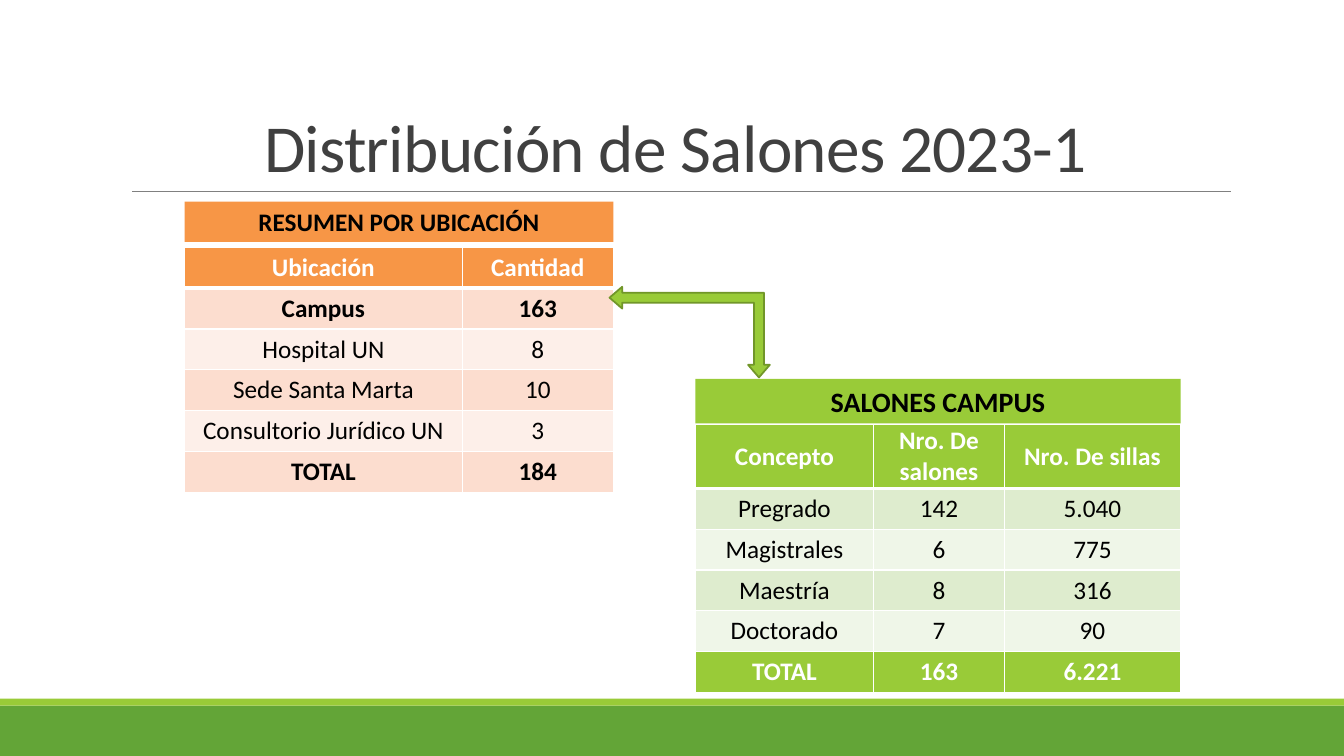
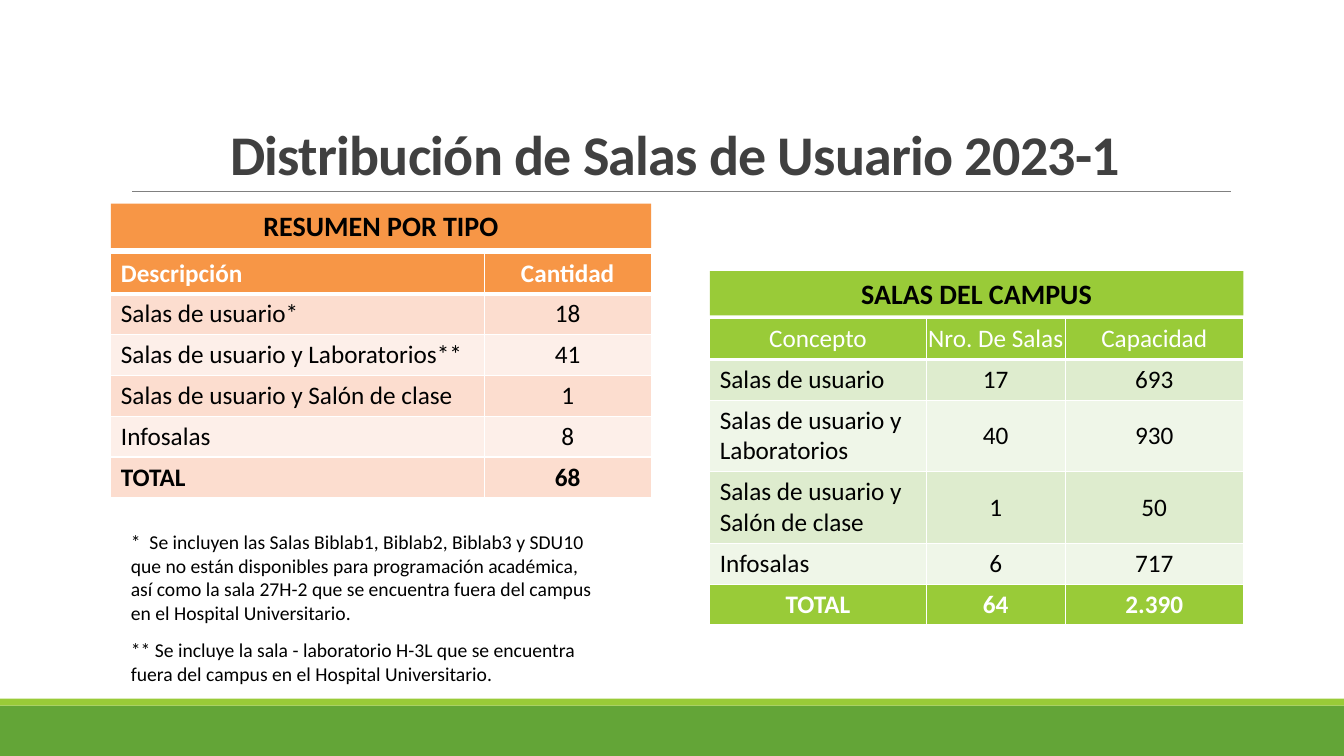
from dataclasses import dataclass

from lxml.etree import SubElement
from pptx import Presentation
from pptx.dml.color import RGBColor
from pptx.enum.shapes import MSO_CONNECTOR, MSO_SHAPE
from pptx.enum.text import MSO_ANCHOR, MSO_AUTO_SIZE, PP_ALIGN
from pptx.oxml.ns import qn
from pptx.util import Inches, Pt

WIDTH, HEIGHT = Inches(13.33), Inches(7.5)
FONT = "Calibri"
BLACK, WHITE, CHARCOAL, GRAY = "000000", "FFFFFF", "404040", "808080"
LIME, GREEN, OLIVE = "99CB38", "63A537", "719629"
ROW, TALL_HEADER, TALL_ROW = 5.4, 8.24, 9.47


@dataclass
class Palette:
    accent: str
    stripes: tuple
    total: str
    total_text: str


ORANGE_PANEL = Palette("F79646", ("FCDDCF", "FDEFE9"), "FCDDCF", BLACK)
GREEN_PANEL = Palette(LIME, ("DEECCE", "EFF6E8"), LIME, WHITE)


def across(percent):
    return round(WIDTH * percent / 100)


def down(percent):
    return round(HEIGHT * percent / 100)


def place(left, top, width, height):
    return across(left), down(top), across(width), down(height)


def rgb(color):
    return RGBColor.from_string(color)


def style(paragraph, size, color, bold=False, align=PP_ALIGN.LEFT):
    paragraph.alignment = align
    font = paragraph.font
    font.name, font.size, font.bold = FONT, Pt(size), bold
    font.color.rgb = rgb(color)


def add_block(slide, box, color, kind=MSO_SHAPE.RECTANGLE):
    block = slide.shapes.add_shape(kind, *place(*box))
    block.shadow.inherit = False
    block.fill.solid()
    block.fill.fore_color.rgb = rgb(color)
    block.line.fill.background()
    return block


def add_rule(slide, left, right, top):
    rule = slide.shapes.add_connector(
        MSO_CONNECTOR.STRAIGHT, across(left), down(top), across(right), down(top))
    rule.line.color.rgb = rgb(GRAY)
    rule.line.width = Pt(0.5)
    SubElement(rule.element.spPr, qn("a:effectLst"))
    return rule


def decorate_layout(layout, slide):
    decoration = (
        add_block(slide, (0, 93.33, 100, 6.67), GREEN),
        add_block(slide, (0, 92.4, 100, 0.93), LIME),
        add_rule(slide, 9.83, 91.6, 25.33),
    )
    for part in decoration:
        layout.shapes.element.append(part.element)


def set_title(slide, text, size, bold=False):
    title = slide.shapes.title
    title.left, title.top, title.width, title.height = place(9, 4.13, 82.5, 21.2)
    frame = title.text_frame
    frame.text = text
    frame.auto_size = MSO_AUTO_SIZE.NONE
    frame.vertical_anchor = MSO_ANCHOR.BOTTOM
    heading = frame.paragraphs[0]
    style(heading, size, CHARCOAL, bold, PP_ALIGN.CENTER)
    heading.line_spacing = 0.85
    heading.runs[0].font._element.set("spc", "-50")


def add_border(cell, side, points):
    edge = SubElement(cell._tc.get_or_add_tcPr(), qn(f"a:ln{side}"), w=str(Pt(points)))
    paint = SubElement(edge, qn("a:solidFill"))
    SubElement(paint, qn("a:srgbClr"), val=WHITE)


def fill_cell(cell, text, fill, color, bold, align, weights):
    for side, points in zip("LRTB", weights):
        add_border(cell, side, points)
    cell.fill.solid()
    cell.fill.fore_color.rgb = rgb(fill)
    cell.vertical_anchor = MSO_ANCHOR.MIDDLE
    cell.margin_left = cell.margin_right = Inches(0.1 if align == PP_ALIGN.LEFT else 0.01)
    cell.margin_top = cell.margin_bottom = Inches(0.01)
    cell.text = text
    style(cell.text_frame.paragraphs[0], 18, color, bold, align)


def add_table(slide, left, top, width, palette, rows, columns,
              tall=None, bold_rows=(), left_labels=()):
    heights = [(tall or {}).get(index, ROW) for index in range(len(rows))]
    table = slide.shapes.add_table(
        len(rows), len(columns), *place(left, top, width, sum(heights))).table
    table.first_row = table.horz_banding = False
    for column, share in zip(table.columns, columns):
        column.width = across(width * share / sum(columns))
    last = len(rows) - 1
    for index, values in enumerate(rows):
        table.rows[index].height = down(heights[index])
        if index == 0:
            fill, color = palette.accent, WHITE
        elif index == last:
            fill, color = palette.total, palette.total_text
        else:
            fill, color = palette.stripes[(index - 1) % 2], BLACK
        weights = (1, 1, 3 if index == 1 else 1, 3 if index == 0 else 1)
        for position, value in enumerate(values):
            labelled = position == 0 and index in left_labels
            align = PP_ALIGN.LEFT if labelled else PP_ALIGN.CENTER
            fill_cell(table.cell(index, position), value, fill, color,
                      index == last or index in bold_rows, align, weights)


def add_panel(slide, box, gap, palette, heading, rows, columns, size=20, **options):
    left, top, width, banner_height = box
    banner = add_block(slide, box, palette.accent)
    frame = banner.text_frame
    frame.text = heading
    frame.vertical_anchor = MSO_ANCHOR.MIDDLE
    style(frame.paragraphs[0], size, BLACK, True, PP_ALIGN.CENTER)
    add_table(slide, left, top + banner_height + gap, width,
              palette, rows, columns, **options)


def add_link_arrow(slide, box):
    arrow = add_block(slide, box, LIME, MSO_SHAPE.LEFT_UP_ARROW)
    arrow.rotation = 270
    for index, share in enumerate((0.11, 0.12, 0.14)):
        arrow.adjustments[index] = share
    arrow.line.color.rgb = rgb(OLIVE)
    arrow.line.width = Pt(1.25)


def add_footnotes(slide, box, notes):
    frame = slide.shapes.add_textbox(*place(*box)).text_frame
    frame.word_wrap = True
    for index, note in enumerate(notes):
        paragraph = frame.add_paragraph() if index else frame.paragraphs[0]
        paragraph.text = note
        paragraph.space_after = Pt(10)
        style(paragraph, 14, BLACK)


def build_classrooms(slide):
    set_title(slide, "Distribución de Salones 2023-1", 48)
    add_panel(
        slide, (13.73, 26.67, 31.9, 5.33), 0.73, ORANGE_PANEL, "RESUMEN POR UBICACIÓN",
        [("Ubicación", "Cantidad"),
         ("Campus", "163"),
         ("Hospital UN", "8"),
         ("Sede Santa Marta", "10"),
         ("Consultorio Jurídico UN", "3"),
         ("TOTAL", "184")],
        (2.76, 1.5), size=18, bold_rows=(0, 1))
    add_panel(
        slide, (51.74, 50.13, 36.1, 5.87), 0.2, GREEN_PANEL, "SALONES CAMPUS",
        [("Concepto", "Nro. De salones", "Nro. De sillas"),
         ("Pregrado", "142", "5.040"),
         ("Magistrales", "6", "775"),
         ("Maestría", "8", "316"),
         ("Doctorado", "7", "90"),
         ("TOTAL", "163", "6.221")],
        (1.77, 1.3, 1.75), tall={0: TALL_HEADER}, bold_rows=(0,))
    add_link_arrow(slide, (47.94, 33.33, 6.75, 21.2))


def build_user_rooms(slide):
    set_title(slide, "Distribución de Salas de Usuario 2023-1", 40, True)
    add_panel(
        slide, (8.25, 26.93, 40.2, 5.87), 0.67, ORANGE_PANEL, "RESUMEN POR TIPO",
        [("Descripción", "Cantidad"),
         ("Salas de usuario*", "18"),
         ("Salas de usuario y Laboratorios**", "41"),
         ("Salas de usuario y Salón de clase", "1"),
         ("Infosalas", "8"),
         ("TOTAL", "68")],
        (3.69, 1.65), bold_rows=(0,), left_labels=range(6))
    add_panel(
        slide, (52.81, 35.87, 39.7, 5.87), 0.4, GREEN_PANEL, "SALAS DEL CAMPUS",
        [("Concepto", "Nro. De Salas", "Capacidad"),
         ("Salas de usuario", "17", "693"),
         ("Salas de usuario y Laboratorios", "40", "930"),
         ("Salas de usuario y Salón de clase", "1", "50"),
         ("Infosalas", "6", "717"),
         ("TOTAL", "64", "2.390")],
        (2.15, 1.38, 1.77), tall={2: TALL_ROW, 3: TALL_ROW}, left_labels=range(1, 5))
    add_footnotes(slide, (9, 69.47, 36.4, 22), (
        "*  Se incluyen las Salas Biblab1, Biblab2, Biblab3 y SDU10 que no están "
        "disponibles para programación académica, así como la sala 27H-2 que se "
        "encuentra fuera del campus en el Hospital Universitario.",
        "** Se incluye la sala - laboratorio H-3L que se encuentra fuera del campus "
        "en el Hospital Universitario."))


def main():
    deck = Presentation()
    deck.slide_width, deck.slide_height = WIDTH, HEIGHT
    layout = deck.slide_layouts[5]
    for number, build in enumerate((build_classrooms, build_user_rooms)):
        slide = deck.slides.add_slide(layout)
        if number == 0:
            decorate_layout(layout, slide)
        build(slide)
    deck.save("out.pptx")


if __name__ == "__main__":
    main()
